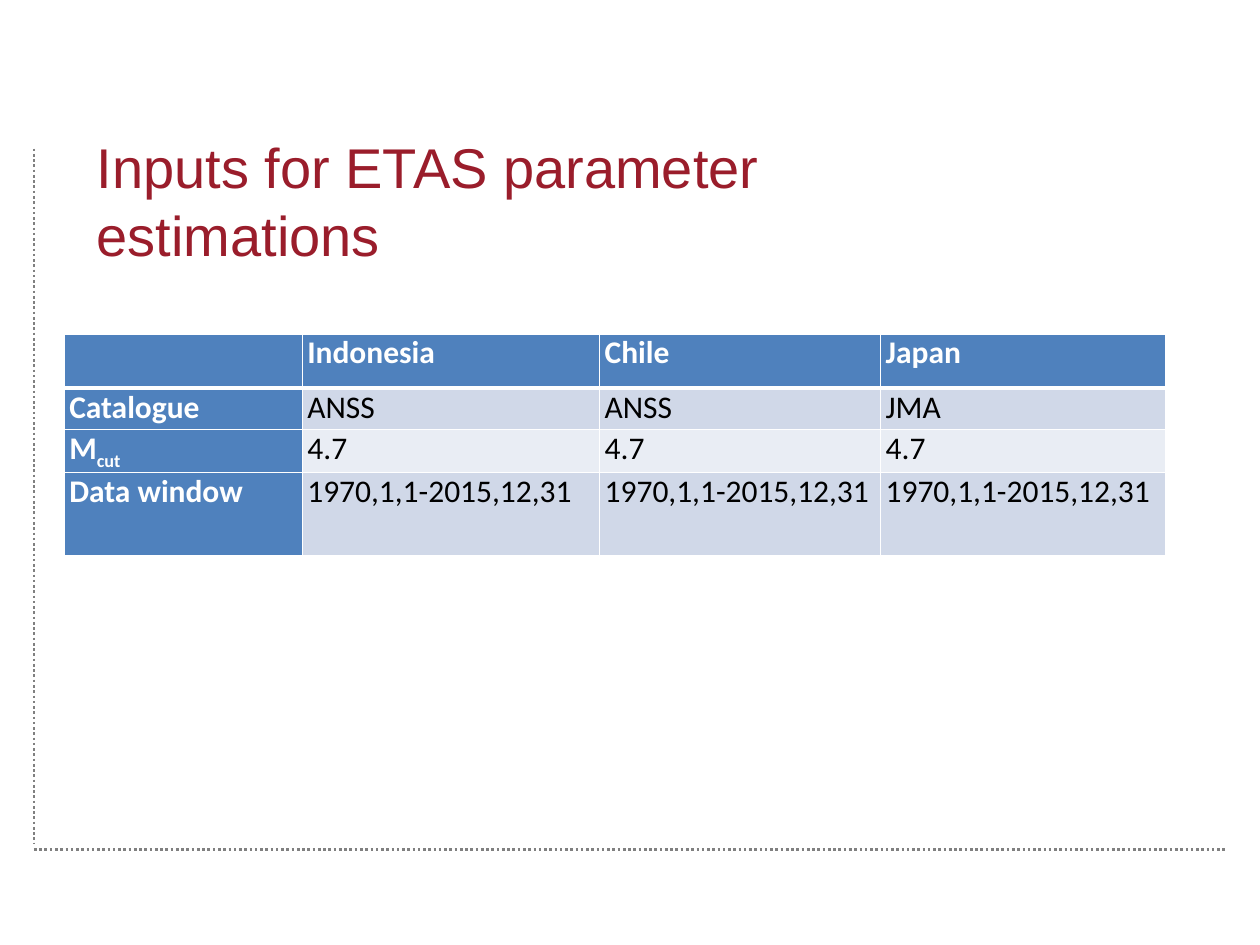
from dataclasses import dataclass

import pptx
import pptx.dml.color
import pptx.enum.dml
import pptx.enum.shapes
import pptx.enum.text
import pptx.oxml.ns
import pptx.util
from lxml import etree

Inches = pptx.util.Inches
Pt = pptx.util.Pt
qn = pptx.oxml.ns.qn


@dataclass(frozen=True)
class Theme:
    title: str = "9A1D2B"
    header: str = "4F81BD"
    odd_row: str = "D0D8E8"
    even_row: str = "E9EDF4"
    light: str = "FFFFFF"
    dark: str = "000000"
    rule: str = "808080"
    title_font: str = "Arial"
    table_font: str = "Calibri"
    title_size: int = 32
    table_size: int = 18
    rule_width: float = 1.5
    border_width: float = 1
    header_border_width: float = 3


@dataclass(frozen=True)
class Rule:
    start: tuple[float, float]
    end: tuple[float, float]


@dataclass(frozen=True)
class Label:
    text: str
    subscript: str = ""


THEME = Theme()
FRAME_RULES = [Rule((0.27, 1.18), (0.27, 6.7)), Rule((0.27, 6.74), (9.73, 6.74))]
COLUMN_WIDTHS = [1.89, 2.36, 2.23, 2.26]
ROW_HEIGHTS = [0.43, 0.33, 0.33, 0.66]
DATA_WINDOW = "1970,1,1-2015,12,31"
INPUTS = [
    [Label(""), Label("Indonesia"), Label("Chile"), Label("Japan")],
    [Label("Catalogue"), Label("ANSS"), Label("ANSS"), Label("JMA")],
    [Label("M", "cut")] + [Label("4.7")] * 3,
    [Label("Data window")] + [Label(DATA_WINDOW)] * 3,
]


def rgb(color: str) -> pptx.dml.color.RGBColor:
    return pptx.dml.color.RGBColor.from_string(color)


def add_text(paragraph, text: str, *, font: str, size: float, color: str,
             bold: bool = False, baseline: int = 0) -> None:
    """Append a formatted run; baseline is a percentage, negative for subscript."""
    run = paragraph.add_run()
    run.text = text
    run.font.name = font
    run.font.size = Pt(size)
    run.font.bold = bold
    run.font.color.rgb = rgb(color)
    if baseline:
        run.font._element.set("baseline", str(baseline * 1000))


def draw_rule(slide, rule: Rule) -> None:
    connector = slide.shapes.add_connector(
        pptx.enum.shapes.MSO_CONNECTOR.STRAIGHT,
        *map(Inches, rule.start), *map(Inches, rule.end))
    connector.line.color.rgb = rgb(THEME.rule)
    connector.line.width = Pt(THEME.rule_width)
    connector.line.dash_style = pptx.enum.dml.MSO_LINE.ROUND_DOT
    etree.SubElement(connector._element.spPr, qn("a:effectLst"))


def draw_title(slide, text: str) -> None:
    title = slide.shapes.add_textbox(Inches(0.67), Inches(0.99), Inches(5.59), Inches(1.18))
    frame = title.text_frame
    frame.word_wrap = True
    frame.vertical_anchor = pptx.enum.text.MSO_ANCHOR.BOTTOM
    add_text(frame.paragraphs[0], text, font=THEME.title_font,
             size=THEME.title_size, color=THEME.title)


def set_border(cell, side: str, width: float) -> None:
    """Draw one cell side (L, R, T or B); call before filling the cell."""
    border = etree.SubElement(cell._tc.get_or_add_tcPr(), qn(f"a:ln{side}"), w=str(Pt(width)))
    fill = etree.SubElement(border, qn("a:solidFill"))
    etree.SubElement(fill, qn("a:srgbClr"), val=THEME.light)


def draw_cell(cell, label: Label, row: int, column: int) -> None:
    is_heading = row == 0 or column == 0
    for side in "LRTB":
        under_header = (row, side) in ((0, "B"), (1, "T"))
        set_border(cell, side, THEME.header_border_width if under_header else THEME.border_width)
    cell.fill.solid()
    band = THEME.odd_row if row % 2 else THEME.even_row
    cell.fill.fore_color.rgb = rgb(THEME.header if is_heading else band)
    cell.margin_left = cell.margin_right = Inches(0.04)
    cell.margin_top = cell.margin_bottom = 0
    style = dict(font=THEME.table_font, size=THEME.table_size, bold=is_heading,
                 color=THEME.light if is_heading else THEME.dark)
    paragraph = cell.text_frame.paragraphs[0]
    if label.text:
        add_text(paragraph, label.text, **style)
    if label.subscript:
        add_text(paragraph, label.subscript, baseline=-25, **style)


def draw_inputs_table(slide) -> None:
    table = slide.shapes.add_table(
        len(ROW_HEIGHTS), len(COLUMN_WIDTHS), Inches(0.51), Inches(2.65),
        Inches(sum(COLUMN_WIDTHS)), Inches(sum(ROW_HEIGHTS))).table
    table.first_col = True
    for column, width in zip(table.columns, COLUMN_WIDTHS):
        column.width = Inches(width)
    for row, height in zip(table.rows, ROW_HEIGHTS):
        row.height = Inches(height)
    for row, labels in enumerate(INPUTS):
        for column, label in enumerate(labels):
            draw_cell(table.cell(row, column), label, row, column)


def main() -> None:
    presentation = pptx.Presentation()
    presentation.slide_width = Inches(10)
    presentation.slide_height = Inches(7.5)
    slide = presentation.slides.add_slide(presentation.slide_layouts[6])
    for rule in FRAME_RULES:
        draw_rule(slide, rule)
    draw_title(slide, "Inputs for ETAS parameter estimations")
    draw_inputs_table(slide)
    presentation.save("out.pptx")


if __name__ == "__main__":
    main()
